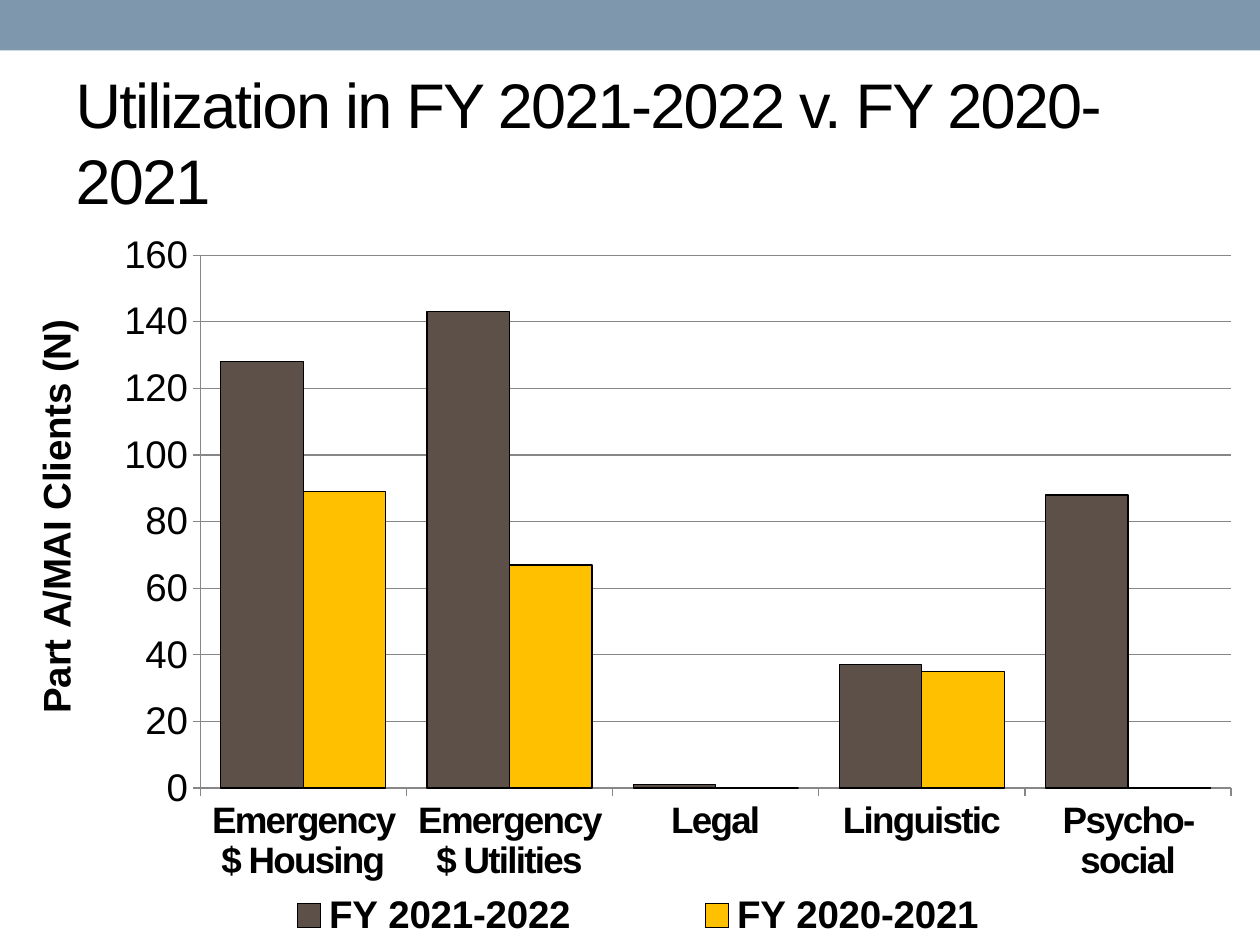
import pptx
import pptx.chart.data
import pptx.dml.color
import pptx.enum.chart
import pptx.enum.shapes
import pptx.enum.text
import pptx.oxml
import pptx.oxml.ns
import pptx.util
from dataclasses import dataclass

Pt = pptx.util.Pt
RGB = pptx.dml.color.RGBColor.from_string


@dataclass(frozen=True)
class Theme:
    font: str = "Arial"
    ink: str = "000000"
    band: str = "7E97AD"
    grid: str = "878787"
    series: tuple = ("5C5048", "FFC000")
    title_size: int = 36
    chart_size: int = 22
    category_size: int = 21
    tracking: int = -100


THEME = Theme()
CATEGORIES = ["Emergency $ Housing", "Emergency $ Utilities", "Legal",
              "Linguistic", "Psycho- social"]
CLIENTS = {"FY 2021-2022": (128, 143, 1, 37, 88),
           "FY 2020-2021": (89, 67, 0, 35, 0)}


def style_font(font, size, bold=False):
    font.name = THEME.font
    font.size = Pt(size)
    font.bold = bold
    font.color.rgb = RGB(THEME.ink)


def style_line(line, color):
    line.color.rgb = RGB(color)
    line.width = Pt(0.75)


def set_layout(parent, before, **values):
    """Place a chart part by fractions of the chart's size."""
    for old in parent.findall(pptx.oxml.ns.qn("c:layout")):
        parent.remove(old)
    parts = "".join(f'<c:{name} val="{value}"/>' for name, value in values.items())
    layout = pptx.oxml.parse_xml(
        f'<c:layout {pptx.oxml.ns.nsdecls("c")}><c:manualLayout>{parts}'
        "</c:manualLayout></c:layout>")
    parent.find(pptx.oxml.ns.qn(before)).addprevious(layout)


def add_band(page, left, top, width, height):
    band = page.shapes.add_shape(pptx.enum.shapes.MSO_SHAPE.RECTANGLE,
                                 Pt(left), Pt(top), Pt(width), Pt(height))
    band.shadow.inherit = False
    band.fill.solid()
    band.fill.fore_color.rgb = RGB(THEME.band)
    band.line.fill.background()


def fill_title(page, text, left, top, width, height):
    title = page.shapes.title
    title.left, title.top = Pt(left), Pt(top)
    title.width, title.height = Pt(width), Pt(height)
    frame = title.text_frame
    frame.text = text
    frame.word_wrap = True
    frame.auto_size = pptx.enum.text.MSO_AUTO_SIZE.NONE
    frame.vertical_anchor = pptx.enum.text.MSO_ANCHOR.MIDDLE
    para = frame.paragraphs[0]
    para.alignment = pptx.enum.text.PP_ALIGN.LEFT
    style_font(para.font, THEME.title_size)
    para.runs[0].font._element.set("spc", str(THEME.tracking))


def style_axes(chart):
    outside = pptx.enum.chart.XL_TICK_MARK.OUTSIDE
    for axis in (chart.category_axis, chart.value_axis):
        axis.major_tick_mark = outside
        style_line(axis.format.line, THEME.grid)

    category_font = chart.category_axis.tick_labels.font
    style_font(category_font, THEME.category_size, bold=True)
    category_font._element.set("spc", str(THEME.tracking))

    values = chart.value_axis
    values.minimum_scale, values.maximum_scale, values.major_unit = 0, 160, 20
    values.has_major_gridlines = True
    style_line(values.major_gridlines.format.line, THEME.grid)
    style_font(values.tick_labels.font, THEME.chart_size)
    values.tick_labels.number_format = "#,##0"
    values.tick_labels.number_format_is_linked = False
    title = values.axis_title
    title.text_frame.text = "Part A/MAI Clients (N)"
    style_font(title.text_frame.paragraphs[0].font, THEME.chart_size, bold=True)
    set_layout(title._element, "c:overlay", xMode="edge", yMode="edge", x=0.02, y=0.12)


def add_utilization_chart(page, left, top, width, height):
    data = pptx.chart.data.CategoryChartData()
    data.categories = CATEGORIES
    for name, values in CLIENTS.items():
        data.add_series(name, values)
    chart = page.shapes.add_chart(
        pptx.enum.chart.XL_CHART_TYPE.COLUMN_CLUSTERED,
        Pt(left), Pt(top), Pt(width), Pt(height), data).chart
    chart.has_title = False
    style_font(chart.font, THEME.chart_size)

    plot = chart.plots[0]
    plot.gap_width, plot.overlap, plot.vary_by_categories = 50, 0, False
    for series, color in zip(plot.series, THEME.series):
        series.format.fill.solid()
        series.format.fill.fore_color.rgb = RGB(color)
        style_line(series.format.line, THEME.ink)
    style_axes(chart)
    set_layout(chart._chartSpace.chart.plotArea, "c:barChart", layoutTarget="inner",
               xMode="edge", yMode="edge", x=0.16, y=0.045, w=0.824, h=0.69)

    chart.has_legend = True
    legend = chart.legend
    legend.position = pptx.enum.chart.XL_LEGEND_POSITION.BOTTOM
    legend.include_in_layout = False
    style_font(legend.font, THEME.chart_size, bold=True)
    set_layout(legend._element, "c:overlay", xMode="edge", yMode="edge",
               x=0.14, y=0.87, w=0.74, h=0.06)


def main():
    deck = pptx.Presentation()
    deck.slide_width, deck.slide_height = Pt(720), Pt(540)
    page = deck.slides.add_slide(deck.slide_layouts.get_by_name("Title Only"))
    add_band(page, 0, 0, 720, 28.8)
    fill_title(page, "Utilization in FY 2021-2022 v. FY 2020-2021", 36, 41.76, 648, 77.76)
    add_utilization_chart(page, 0, 126, 715, 441.36)
    deck.save("out.pptx")


if __name__ == "__main__":
    main()
